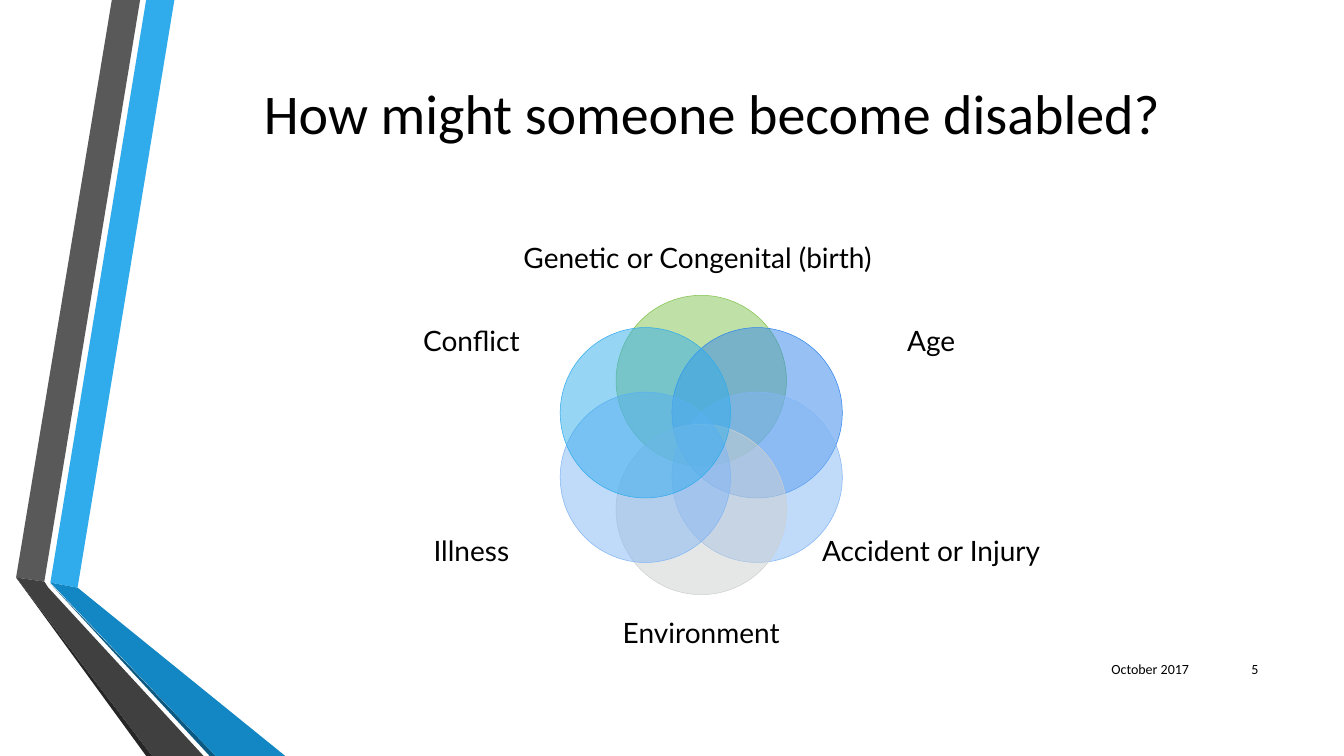
import math
from dataclasses import dataclass

import pptx
import pptx.util
from lxml import etree
from pptx.dml.color import RGBColor
from pptx.enum.shapes import MSO_SHAPE
from pptx.enum.text import MSO_ANCHOR, PP_ALIGN
from pptx.oxml.ns import qn
from pptx.util import Inches


@dataclass(frozen=True)
class Theme:
    ink: str = "000000"
    sky: str = "30ACEC"
    green: str = "80C34F"
    blue: str = "3085ED"
    pale: str = "82B6F4"
    silver: str = "CDD0D1"
    gray: str = "595959"
    coal: str = "404040"
    night: str = "262626"
    navy: str = "0C5A82"
    ocean: str = "1287C3"
    head: int = 40
    label: int = 20
    small: int = 10
    main: str = "Calibri"
    round: str = "Lato"


theme = Theme()


def write(shape, text, size, font, align):
    """Put one line of text in the shape, centred in height."""
    frame = shape.text_frame
    frame.vertical_anchor = MSO_ANCHOR.MIDDLE
    line = frame.paragraphs[0]
    line.text = text
    line.alignment = align
    line.font.size = pptx.util.Pt(size)
    line.font.name = font
    line.font.color.rgb = RGBColor.from_string(theme.ink)
    return frame


def paint(shape, color):
    shape.shadow.inherit = False
    shape.fill.solid()
    shape.fill.fore_color.rgb = RGBColor.from_string(color)
    shape.line.fill.background()


deck = pptx.Presentation()
deck.slide_width = Inches(13.33)
deck.slide_height = Inches(7.5)
slide = deck.slides.add_slide(deck.slide_layouts[5])
shapes = slide.shapes

# Folded ribbons on the left edge
ribbons = [
    (theme.sky, [(0.5, 5.78), (0.77, 5.83), (1.73, 0), (1.45, 0)]),
    (theme.gray, [(1.39, 0), (1.11, 0), (0.16, 5.73), (0.44, 5.77)]),
    (theme.night, [(0.16, 5.73), (1.45, 7.5), (1.51, 7.5)]),
    (theme.navy, [(0.5, 5.79), (2.08, 7.5), (2.14, 7.5)]),
    (theme.ocean, [(0.5, 5.78), (2.14, 7.5), (2.83, 7.5), (0.77, 5.83)]),
    (theme.coal, [(2.02, 7.5), (0.48, 5.83), (0.44, 5.77), (0.16, 5.73), (1.51, 7.5)]),
]
for color, points in ribbons:
    start, *rest = [(Inches(x), Inches(y)) for x, y in points]
    pen = shapes.build_freeform(*start)
    pen.add_line_segments(rest, close=True)
    paint(pen.convert_to_shape(), color)

# Title
title = shapes.title
title.left, title.top = Inches(1.56), Inches(0.33)
title.width, title.height = Inches(11), Inches(1.57)
write(title, "How might someone become disabled?", theme.head, theme.main, PP_ALIGN.CENTER)

# Ring of causes, clockwise from the top; each label sits at an offset from the centre
ring, size, tall = 0.64, 1.69, 0.42
mid_x = 6.11 + size / 2
mid_y = 2.93 + ring + size / 2
far, side, low = 1.86, 2.28, 1.04
causes = [
    ("Genetic or Congenital (birth) ", theme.green, 0, -far),
    ("Age", theme.blue, side, -low),
    ("Accident or Injury", theme.pale, side, low),
    ("Environment", theme.silver, 0, far),
    ("Illness", theme.pale, -side, low),
    ("Conflict", theme.sky, -side, -low),
]
for i, (name, color, dx, dy) in enumerate(causes):
    turn = math.tau * i / len(causes)
    x = mid_x + ring * math.sin(turn) - size / 2
    y = mid_y - ring * math.cos(turn) - size / 2
    disc = shapes.add_shape(MSO_SHAPE.OVAL, Inches(x), Inches(y), Inches(size), Inches(size))
    paint(disc, color)
    tint = disc.fill._xPr.find(qn("a:solidFill"))[0]
    etree.SubElement(tint, qn("a:alpha"), val="50000")
    disc.line.color.rgb = RGBColor.from_string(color)
    disc.line.width = pptx.util.Pt(0.37)

    # A rectangle, unlike a text box, lets a long name run past its sides
    left, top = mid_x + dx - size / 2, mid_y + dy - tall / 2
    label = shapes.add_shape(
        MSO_SHAPE.RECTANGLE, Inches(left), Inches(top), Inches(size), Inches(tall)
    )
    label.shadow.inherit = False
    label.fill.background()
    label.line.fill.background()
    frame = write(label, name, theme.label, theme.round, PP_ALIGN.CENTER)
    frame.word_wrap = False
    frame.margin_left = frame.margin_right = frame.margin_top = frame.margin_bottom = 0

# Date and page number
for text, left, width in [("October 2017", 10.64, 1.25), ("5", 11.98, 0.6)]:
    note = shapes.add_textbox(Inches(left), Inches(6.44), Inches(width), Inches(0.4))
    write(note, text, theme.small, theme.main, PP_ALIGN.RIGHT).word_wrap = True

deck.save("out.pptx")
